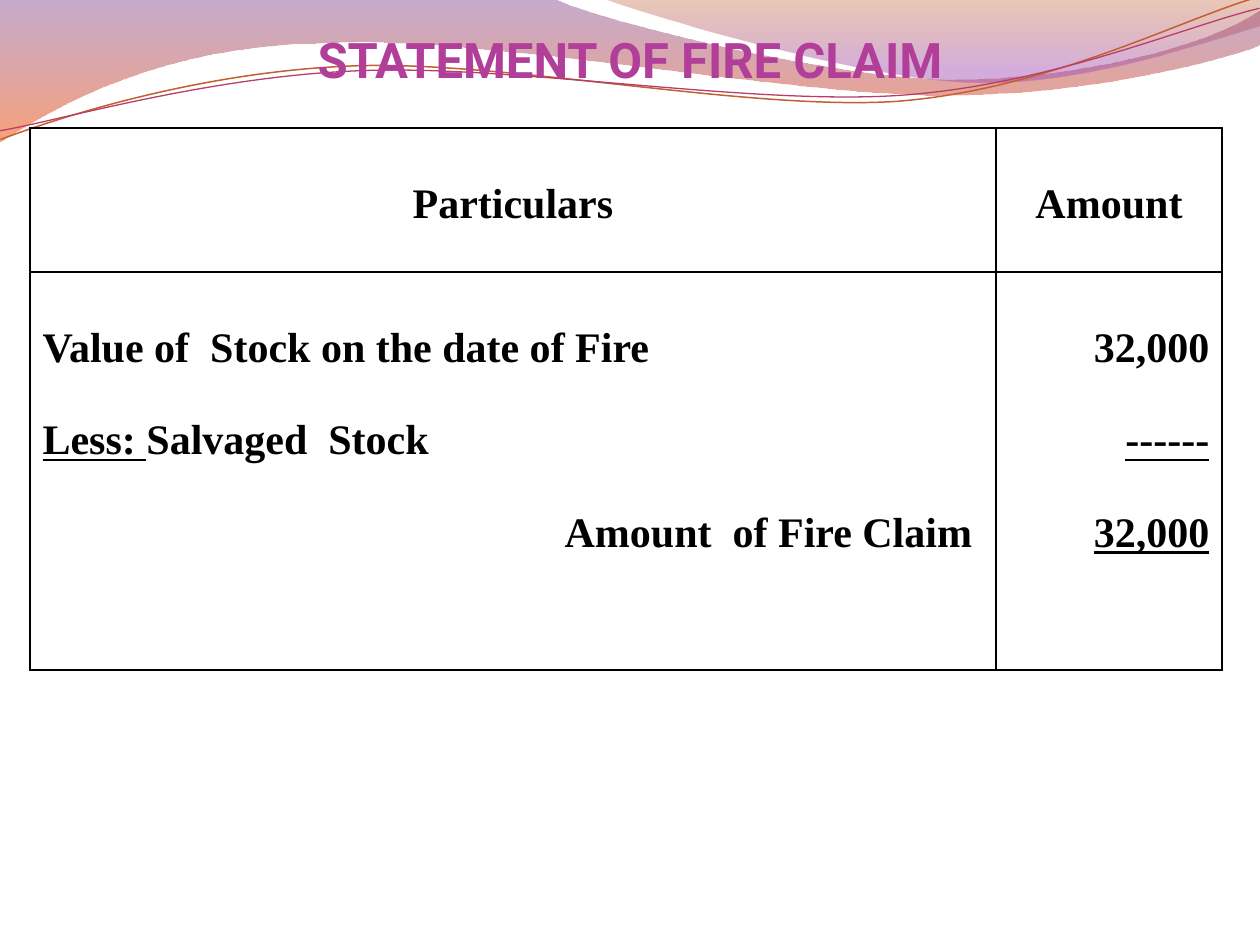
from lxml.etree import SubElement
from pptx import Presentation
from pptx.dml.color import RGBColor
from pptx.enum.text import MSO_ANCHOR, MSO_AUTO_SIZE, PP_ALIGN
from pptx.oxml.ns import qn
from pptx.util import Pt

PX = 914400 / 126
COLORS = {
    "plum": "834591", "orange": "F35307", "rust": "B74915", "violet": "A14BB4",
    "copper": "C45F30", "rose": "B83D68", "title": "B13F9A", "black": "000000",
}


def px(value):
    return round(value * PX)


presentation = Presentation()
presentation.slide_width, presentation.slide_height = px(1260), px(945)
slide = presentation.slides.add_slide(presentation.slide_layouts[5])

# Waves: commands ("L" line, "C" curve with two control points and an end),
# gradient stops (position, colour, opacity), line (colour, points), rotation
waves = [
    ([("M", (0, 0)), ("L", (554, -1)),
      ("C", (600, 21), (837, 79), (955, 79)),
      ("C", (1075, 79), (1207, 47), (1260, 11)),
      ("L", (1261, 45)),
      ("C", (1239, 55), (1096, 96), (940, 95)),
      ("C", (784, 95), (481, 35), (324, 43)),
      ("C", (163, 45), (58, 105), (-1, 142)),
      ("L", (0, 0))],
     [(0, "plum", 45), (1, "orange", 55)], None, 0),
    ([("M", (604, -1)),
      ("C", (641, 14), (859, 78), (969, 82)),
      ("C", (1079, 87), (1211, 40), (1260, 26)),
      ("L", (1260, 0)), ("L", (604, -1))],
     [(0, "rust", 30), (0.8, "violet", 45)], None, 0),
    ([("M", (-2, 110)),
      ("C", (59, 90), (200, 52), (350, 53)),
      ("C", (499, 53), (745, 117), (896, 114)),
      ("C", (1049, 109), (1184, 45), (1260, 27))],
     None, ("copper", 0.85), -2.7),
    ([("M", (-2, 101)),
      ("C", (57, 94), (207, 57), (357, 58)),
      ("C", (509, 58), (750, 112), (902, 108)),
      ("C", (1052, 104), (1188, 52), (1262, 38))],
     None, ("rose", 0.75), -2.7),
]
for commands, stops, line, rotation in waves:
    points = [point for command in commands for point in command[1:]]
    builder = slide.shapes.build_freeform(*points[0], scale=PX)
    builder.add_line_segments(points[1:], close=stops is not None)
    shape = builder.convert_to_shape()
    shape.shadow.inherit = False
    shape.rotation = rotation

    # Join each three segments of a curve into one cubic
    segments = iter(list(shape.element.iter(qn("a:lnTo"))))
    for kind, *_ in commands[1:]:
        segment = next(segments)
        if kind == "C":
            segment.tag = qn("a:cubicBezTo")
            for extra in (next(segments), next(segments)):
                segment.append(extra[0])
                extra.getparent().remove(extra)

    if stops:
        shape.line.fill.background()
        shape.fill.gradient()
        shape.fill.gradient_angle = 270
        for stop, (position, color, _) in zip(shape.fill.gradient_stops, stops):
            stop.position = position
            stop.color.rgb = RGBColor.from_string(COLORS[color])
        for node, (_, _, opacity) in zip(shape.element.iter(qn("a:srgbClr")), stops):
            SubElement(node, qn("a:alpha")).set("val", str(opacity * 1000))
    else:
        shape.fill.background()
        shape.line.color.rgb = RGBColor.from_string(COLORS[line[0]])
        shape.line.width = Pt(line[1])

# Title, in front of the waves
title = slide.shapes.title
slide.shapes.element.append(title.element)
title_box = {"left": px(63), "top": px(0), "width": px(1134), "height": px(88)}
for name, value in title_box.items():
    setattr(title, name, value)
title_frame = {
    "auto_size": MSO_AUTO_SIZE.NONE, "vertical_anchor": MSO_ANCHOR.BOTTOM,
    "margin_left": 0, "margin_right": 0, "margin_top": px(6), "margin_bottom": 0,
}
for name, value in title_frame.items():
    setattr(title.text_frame, name, value)
paragraph = title.text_frame.paragraphs[0]
paragraph.alignment = PP_ALIGN.CENTER
run = paragraph.add_run()
run.text = "STATEMENT OF FIRE CLAIM"
for name, value in {"name": "Roboto", "size": Pt(28), "bold": True}.items():
    setattr(run.font, name, value)
run.font.color.rgb = RGBColor.from_string(COLORS["title"])

# Table: each cell lists paragraphs of (alignment, indent, [(text, underlined)])
LEFT, CENTER, RIGHT = PP_ALIGN.LEFT, PP_ALIGN.CENTER, PP_ALIGN.RIGHT
rows = [
    [[(CENTER, 0, [("Particulars", False)])],
     [(CENTER, 0, [("Amount", False)])]],
    [[(LEFT, 0, [("Value of  Stock on the date of Fire", False)]),
      (LEFT, 0, [("Less: ", True), ("Salvaged  Stock", False)]),
      (LEFT, 522, [("Amount  of Fire Claim", False)])],
     [(RIGHT, 0, [("32,000", False)]),
      (RIGHT, 0, [("------", True)]),
      (RIGHT, 0, [("32,000", True)])]],
]
column_widths, row_heights = [966, 226], [144, 398]
table = slide.shapes.add_table(2, 2, px(30), px(128), px(sum(column_widths)),
                               px(sum(row_heights))).table
table.first_row = table.horz_banding = False
for column, width in zip(table.columns, column_widths):
    column.width = px(width)
for row, height in zip(table.rows, row_heights):
    row.height = px(height)

for row, cell_contents in zip(table.rows, rows):
    for cell, paragraphs in zip(row.cells, cell_contents):
        # Borders come before the fill in the cell properties
        properties = cell._tc.get_or_add_tcPr()
        for side in ("lnL", "lnR", "lnT", "lnB"):
            border = SubElement(properties, qn(f"a:{side}"), w=str(Pt(1)))
            border_fill = SubElement(border, qn("a:solidFill"))
            SubElement(border_fill, qn("a:srgbClr"), val=COLORS["black"])
        cell.fill.background()
        for index, (alignment, indent, runs) in enumerate(paragraphs):
            frame = cell.text_frame
            paragraph = frame.add_paragraph() if index else frame.paragraphs[0]
            paragraph.alignment = alignment
            paragraph.line_spacing = 2.0
            if indent:
                paragraph._p.get_or_add_pPr().set("marL", str(px(indent)))
            for text, underlined in runs:
                run = paragraph.add_run()
                run.text = text
                run_format = {"name": "Times New Roman", "size": Pt(24),
                              "bold": True, "underline": underlined}
                for name, value in run_format.items():
                    setattr(run.font, name, value)
                run.font.color.rgb = RGBColor.from_string(COLORS["black"])

presentation.save("out.pptx")
